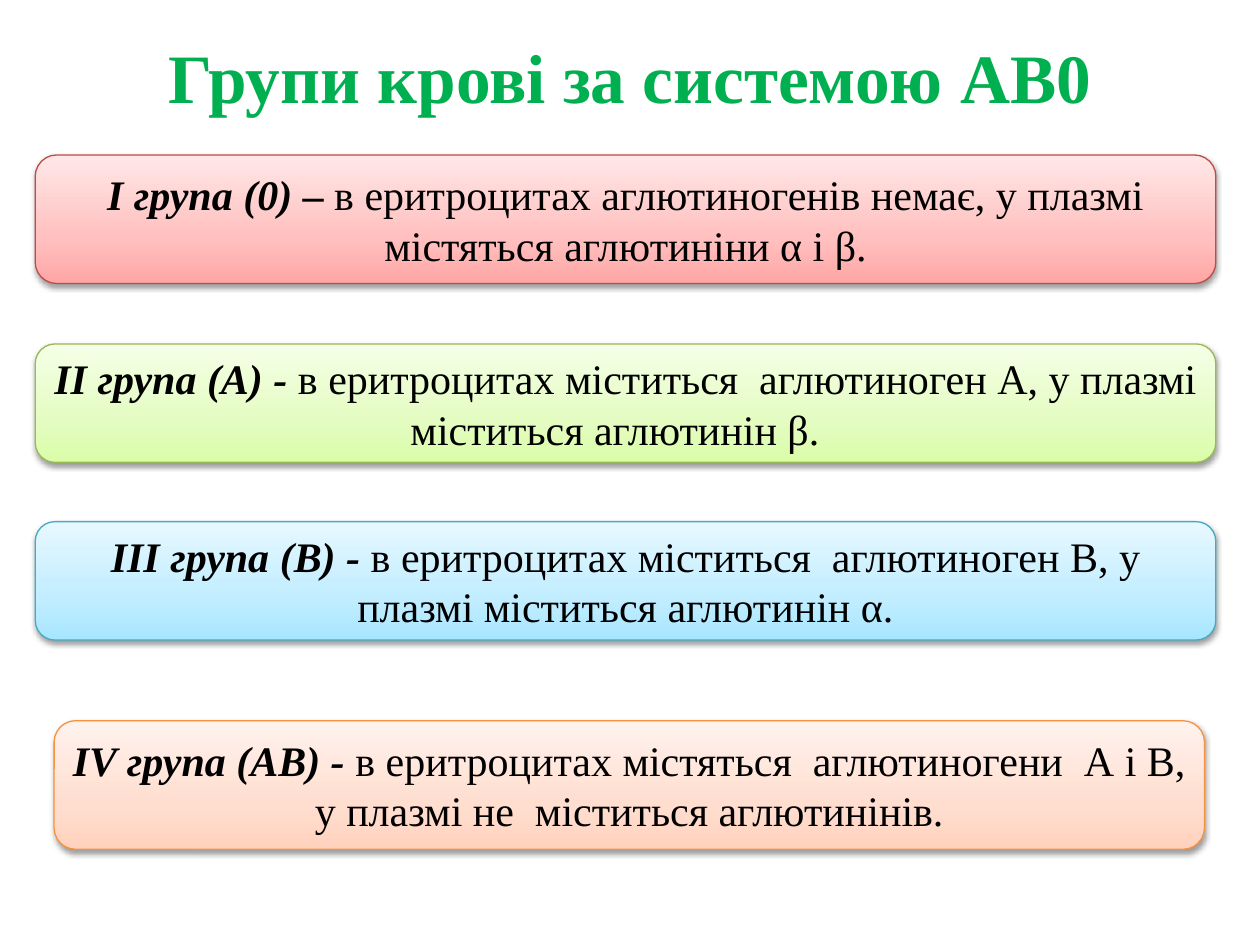
from copy import deepcopy

from lxml.etree import SubElement
from pptx import Presentation
from pptx.dml.color import RGBColor
from pptx.enum.shapes import MSO_SHAPE
from pptx.enum.text import MSO_ANCHOR, PP_ALIGN
from pptx.oxml.ns import qn
from pptx.util import Inches, Pt

FONT = "Times New Roman"
GREEN = RGBColor(0x00, 0xB0, 0x50)
BLACK = RGBColor(0x00, 0x00, 0x00)
STOP_POSITIONS = (0, 0.35, 1)

# Each palette: line colour, then gradient colours from bottom to top
RED, LIME, BLUE, ORANGE = [
    [RGBColor.from_string(code) for code in codes.split()]
    for codes in (
        "BF4C48 FFA6A5 FFC0BF FFE7E7",
        "98B955 DAFDA7 E4FCC2 F5FFE7",
        "46AAC5 A7E6FF C1EDFF E7F8FF",
        "F69240 FFD2BD FFDED0 FFF2ED",
    )
]

# Box in inches, palette, and runs as (text, bold, italic)
BLOOD_GROUPS = [
    ((0.28, 1.23, 9.37, 1.02), RED, [
        ("І група (0) ", True, True),
        ("– ", True, False),
        ("в еритроцитах аглютиногенів немає, у плазмі містяться аглютиніни α і β.", False, False)]),
    ((0.28, 2.73, 9.37, 0.94), LIME, [
        ("ІІ група (А) -", True, True),
        (" в еритроцитах міститься  аглютиноген А, у плазмі міститься аглютинін β.  ", False, False)]),
    ((0.28, 4.14, 9.37, 0.94), BLUE, [
        ("ІІІ група (В) -", True, True),
        (" в еритроцитах міститься  аглютиноген В, у плазмі міститься аглютинін α.", False, False)]),
    ((0.43, 5.72, 9.13, 1.02), ORANGE, [
        ("ІV група (АB) -", True, True),
        (" в еритроцитах містяться  аглютиногени  А і В, у плазмі не  міститься аглютинінів.", False, False)]),
]


def write_centred(shape, runs, size, color):
    text_frame = shape.text_frame
    text_frame.word_wrap = True
    text_frame.vertical_anchor = MSO_ANCHOR.MIDDLE
    paragraph = text_frame.paragraphs[0]
    paragraph.alignment = PP_ALIGN.CENTER
    for text, bold, italic in runs:
        run = paragraph.add_run()
        run.text = text
        run.font.name = FONT
        run.font.size = Pt(size)
        run.font.color.rgb = color
        run.font.bold = bold
        run.font.italic = italic


def fill_gradient(shape, colors):
    """Fill upwards with three stops; the default gradient has only two."""
    shape.fill.gradient()
    shape.fill.gradient_angle = 90
    stop_list = shape._element.spPr.find(".//" + qn("a:gsLst"))
    stop_list.append(deepcopy(stop_list[0]))
    for stop, position, color in zip(shape.fill.gradient_stops, STOP_POSITIONS, colors):
        stop.position = position
        stop.color.rgb = color


def add_soft_shadow(shape):
    shape.shadow.inherit = False
    effects = shape._element.spPr.find(qn("a:effectLst"))
    shadow = SubElement(effects, qn("a:outerShdw"), blurRad=str(Pt(3.1)),
                        dist=str(Pt(1.6)), dir="5400000", rotWithShape="0")
    color = SubElement(shadow, qn("a:srgbClr"), val="000000")
    SubElement(color, qn("a:alpha"), val="38000")


def add_title(slide, box, text):
    title = slide.shapes.add_textbox(*map(Inches, box))
    write_centred(title, [(text, True, False)], 39.6, GREEN)


def add_blood_group(slide, box, palette, runs):
    card = slide.shapes.add_shape(MSO_SHAPE.ROUNDED_RECTANGLE, *map(Inches, box))
    line_color, *gradient_colors = palette
    fill_gradient(card, gradient_colors)
    card.line.color.rgb = line_color
    card.line.width = Pt(0.75)
    add_soft_shadow(card)
    write_centred(card, runs, 24, BLACK)


def main():
    presentation = Presentation()
    presentation.slide_width = Inches(10)
    presentation.slide_height = Inches(7.5)
    slide = presentation.slides.add_slide(presentation.slide_layouts[6])
    add_title(slide, (0.5, 0.3, 9, 0.61), "Групи крові за системою АВ0")
    for box, palette, runs in BLOOD_GROUPS:
        add_blood_group(slide, box, palette, runs)
    presentation.save("out.pptx")


if __name__ == "__main__":
    main()
